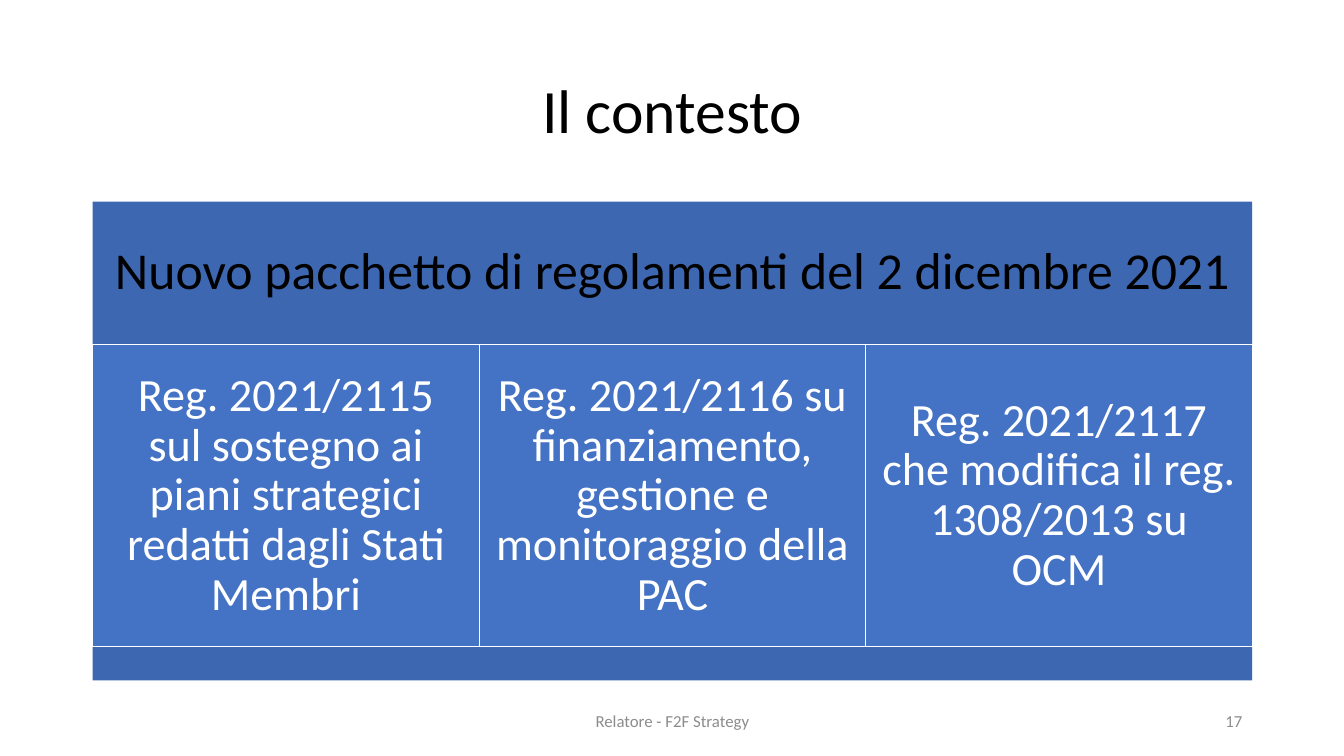
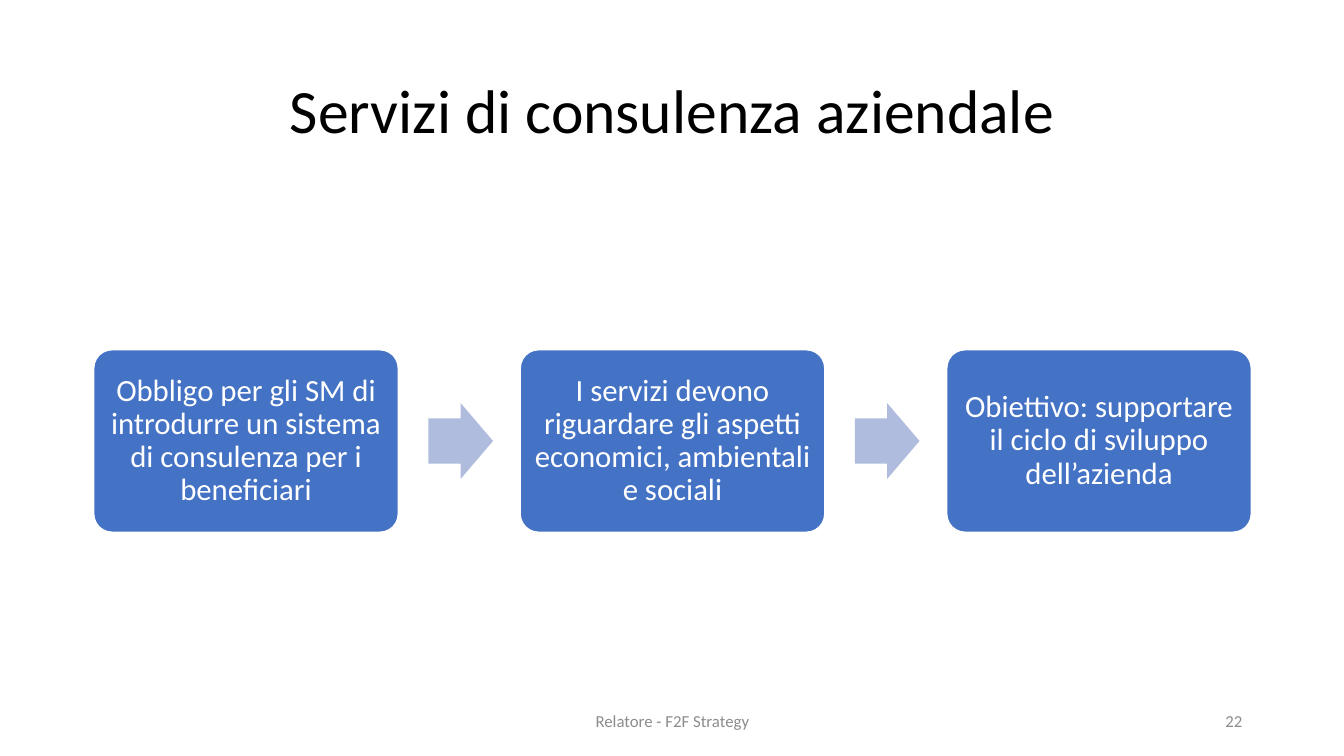
from dataclasses import dataclass

import pptx
import pptx.dml.color
import pptx.enum.shapes
import pptx.enum.text
import pptx.shapes.autoshape
import pptx.slide
import pptx.util
from pptx.util import Inches

Align = pptx.enum.text.PP_ALIGN
Preset = pptx.enum.shapes.MSO_SHAPE

FONT = "Calibri"
COLORS = {
    "black": "000000",
    "white": "FFFFFF",
    "box": "4472C4",
    "band": "3E67B2",
    "arrow": "B0BCDE",
    "footer": "8C8C8C",
}
LEFT, CONTENT_WIDTH = 0.92, 11.5
FOOTER_TOP, FOOTER_HEIGHT = 6.95, 0.4


@dataclass(frozen=True)
class Area:
    left: float
    top: float
    width: float
    height: float

    def lengths(self) -> list[pptx.util.Length]:
        return [Inches(value) for value in (self.left, self.top, self.width, self.height)]


@dataclass(frozen=True)
class TextStyle:
    size: int
    color: str
    align: Align = Align.CENTER
    line_spacing: float = 0.9
    inset: float | None = None


TITLE = TextStyle(44, "black")
FOOTER = TextStyle(12, "footer", line_spacing=1.0)
NUMBER = TextStyle(12, "footer", Align.RIGHT, 1.0)
BAND = TextStyle(37, "black", inset=0.15)
COLUMN = TextStyle(33, "white", inset=0.14)
STEP = TextStyle(22, "white", inset=0.09)


def rgb(name: str) -> pptx.dml.color.RGBColor:
    return pptx.dml.color.RGBColor.from_string(COLORS[name])


def write(shape: pptx.shapes.autoshape.Shape, text: str, style: TextStyle) -> None:
    frame = shape.text_frame
    frame.word_wrap = True
    frame.vertical_anchor = pptx.enum.text.MSO_ANCHOR.MIDDLE
    if style.inset is not None:
        frame.margin_left = frame.margin_right = Inches(style.inset)
        frame.margin_top = frame.margin_bottom = Inches(style.inset)
    frame.text = text
    paragraph = frame.paragraphs[0]
    paragraph.alignment = style.align
    paragraph.line_spacing = style.line_spacing
    font = paragraph.runs[0].font
    font.name = FONT
    font.size = pptx.util.Pt(style.size)
    font.color.rgb = rgb(style.color)


def add_text(slide: pptx.slide.Slide, area: Area, text: str, style: TextStyle) -> None:
    write(slide.shapes.add_textbox(*area.lengths()), text, style)


def add_block(
    slide: pptx.slide.Slide,
    preset: Preset,
    area: Area,
    fill: str,
    line: str | None = None,
    adjustments: tuple[float, ...] = (),
) -> pptx.shapes.autoshape.Shape:
    shape = slide.shapes.add_shape(preset, *area.lengths())
    shape.shadow.inherit = False
    shape.fill.solid()
    shape.fill.fore_color.rgb = rgb(fill)
    if line:
        shape.line.color.rgb = rgb(line)
        shape.line.width = pptx.util.Pt(1)
    else:
        shape.line.fill.background()
    for index, value in enumerate(adjustments):
        shape.adjustments[index] = value
    return shape


def add_slide(presentation: pptx.presentation.Presentation, title: str, number: int) -> pptx.slide.Slide:
    """Add a blank slide with the shared title, footer and slide number."""
    slide = presentation.slides.add_slide(presentation.slide_layouts[6])
    add_text(slide, Area(LEFT, 0.4, CONTENT_WIDTH, 1.45), title, TITLE)
    add_text(slide, Area(4.42, FOOTER_TOP, 4.5, FOOTER_HEIGHT), "Relatore - F2F Strategy", FOOTER)
    add_text(slide, Area(9.42, FOOTER_TOP, 3, FOOTER_HEIGHT), str(number), NUMBER)
    return slide


def add_regulations(slide: pptx.slide.Slide, heading: str, regulations: list[str]) -> None:
    """Draw a heading band, equal columns and a closing band."""
    band_top, column_top, column_height = 2, 3.42, 3
    header = add_block(
        slide, Preset.RECTANGLE, Area(LEFT, band_top, CONTENT_WIDTH, column_top - band_top), "band"
    )
    write(header, heading, BAND)
    width = CONTENT_WIDTH / len(regulations)
    for index, regulation in enumerate(regulations):
        area = Area(LEFT + index * width, column_top, width, column_height)
        write(add_block(slide, Preset.RECTANGLE, area, "box", "white"), regulation, COLUMN)
    add_block(slide, Preset.RECTANGLE, Area(LEFT, column_top + column_height, CONTENT_WIDTH, 0.33), "band")


def add_process(slide: pptx.slide.Slide, steps: list[str]) -> None:
    """Draw rounded steps at an equal pitch, with an arrow before each later step."""
    left, top, width, height, pitch = 0.93, 3.47, 3.02, 1.81, 4.23
    arrow_width, arrow_height, arrow_gap = 0.64, 0.75, 0.27
    for index, step in enumerate(steps):
        step_left = left + index * pitch
        if index:
            arrow = Area(
                step_left - arrow_gap - arrow_width,
                top + (height - arrow_height) / 2,
                arrow_width,
                arrow_height,
            )
            add_block(slide, Preset.RIGHT_ARROW, arrow, "arrow", adjustments=(0.6, 0.5))
        area = Area(step_left, top, width, height)
        write(add_block(slide, Preset.ROUNDED_RECTANGLE, area, "box", "white", (0.1,)), step, STEP)


def main() -> None:
    presentation = pptx.Presentation()
    presentation.slide_width = Inches(13.33)
    presentation.slide_height = Inches(7.5)

    # Context: the package of regulations
    add_regulations(
        add_slide(presentation, "Il contesto", 17),
        "Nuovo pacchetto di regolamenti del 2 dicembre 2021",
        [
            "Reg. 2021/2115 sul sostegno ai piani strategici redatti dagli Stati Membri",
            "Reg. 2021/2116 su finanziamento, gestione e monitoraggio della PAC",
            "Reg. 2021/2117 che modifica il reg. 1308/2013 su OCM",
        ],
    )

    # Advisory services: the three steps
    add_process(
        add_slide(presentation, "Servizi di consulenza aziendale", 22),
        [
            "Obbligo per gli SM di introdurre un sistema di consulenza per i beneficiari",
            "I servizi devono riguardare gli aspetti economici, ambientali e sociali",
            "Obiettivo: supportare il ciclo di sviluppo dell’azienda",
        ],
    )

    presentation.save("out.pptx")


if __name__ == "__main__":
    main()
